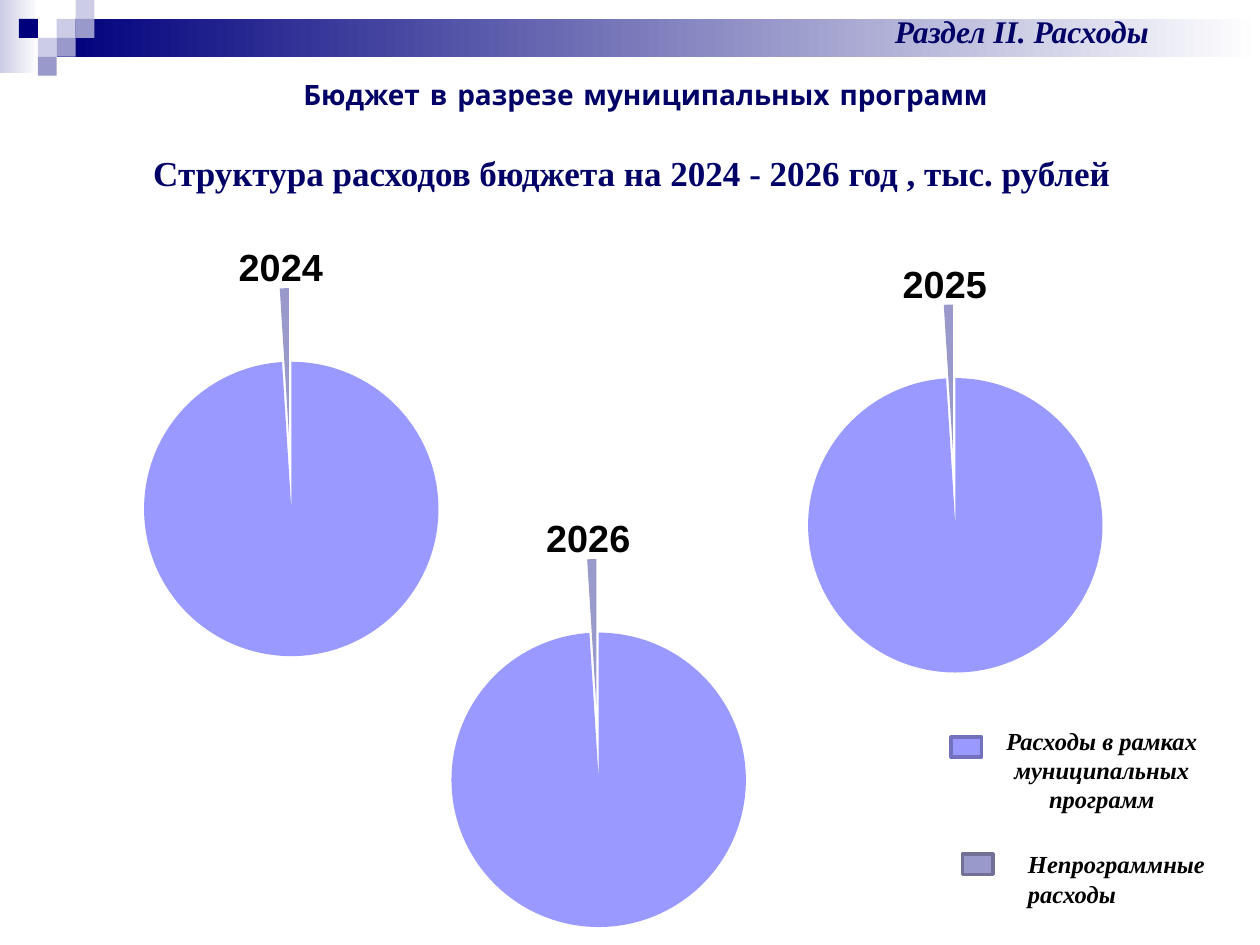
from lxml.etree import SubElement
from pptx import Presentation
from pptx.chart.data import CategoryChartData
from pptx.dml.color import RGBColor
from pptx.enum.chart import XL_CHART_TYPE
from pptx.enum.shapes import MSO_SHAPE
from pptx.enum.text import MSO_ANCHOR, PP_ALIGN
from pptx.oxml.ns import qn
from pptx.util import Inches, Pt

NAVY, LILAC, PALE, BLUE = "00007D", "9999CC", "CCCCE6", "9999FF"
TITLE = "000066"
STEP = 0.15


def rgb(value):
    """Return the colour for a hex string."""
    return RGBColor.from_string(value)


def set_font(font, color, **formats):
    """Apply a colour and format values to a font."""
    font.color.rgb = rgb(color)
    for name, value in formats.items():
        setattr(font, name, value)


def add_rect(s, box, fill, fade=False, line=None):
    """Add a rectangle with a plain fill or a fade to white."""
    sp = s.shapes.add_shape(MSO_SHAPE.RECTANGLE, *map(Inches, box))
    sp.shadow.inherit = False
    if fade:
        sp.fill.gradient()
        sp.fill.gradient_angle = 0
        for stop, color in zip(sp.fill.gradient_stops, (fill, "FFFFFF")):
            stop.color.rgb = rgb(color)
    else:
        sp.fill.solid()
        sp.fill.fore_color.rgb = rgb(fill)
    if line:
        sp.line.color.rgb = rgb(line)
        sp.line.width = Pt(2)
    else:
        sp.line.fill.background()


def add_text(s, box, text, size, color, name="Times New Roman",
             align=PP_ALIGN.CENTER, anchor=MSO_ANCHOR.TOP, italic=False):
    """Add a wrapped text box with one bold paragraph."""
    tf = s.shapes.add_textbox(*map(Inches, box)).text_frame
    tf.word_wrap = True
    tf.vertical_anchor = anchor
    p = tf.paragraphs[0]
    p.alignment = align
    r = p.add_run()
    r.text = text
    set_font(r.font, color, name=name, size=Pt(size), bold=True, italic=italic)


def set_layout(parent, index, **values):
    """Place a chart part by fractions of the chart area."""
    for old in parent.findall(qn("c:layout")):
        parent.remove(old)
    layout = SubElement(parent, qn("c:layout"))
    parent.insert(index, layout)
    manual = SubElement(layout, qn("c:manualLayout"))
    for tag, value in values.items():
        SubElement(manual, qn(f"c:{tag}")).set("val", str(value))


def add_pie(s, left, top, year):
    """Add the exploded pie of one year."""
    data = CategoryChartData()
    data.categories = ["1", "2"]
    data.add_series(year, (99, 1))
    box = map(Inches, (left, top, 4.41, 3.86))
    chart = s.shapes.add_chart(XL_CHART_TYPE.PIE, *box, data).chart
    set_font(chart.font, "000000", name="Arial", size=Pt(18))
    chart.has_legend = False
    chart.has_title = True
    tf = chart.chart_title.text_frame
    tf.text = year
    set_font(tf.paragraphs[0].runs[0].font, "000000",
             name="Arial", size=Pt(21.6), bold=True)
    set_layout(chart.chart_title._element, 1,
               xMode="edge", yMode="edge", x=0.39, y=0.1)
    plot = chart.plots[0]
    plot.vary_by_categories = True
    set_layout(plot._element.getparent(), 0, layoutTarget="inner", xMode="edge",
               yMode="edge", x=0.23, y=0.28, w=0.53, h=0.61)
    series = plot.series[0]
    for i, color in enumerate((BLUE, LILAC)):
        fill = series.points[i].format.fill
        fill.solid()
        fill.fore_color.rgb = rgb(color)
    for point in series._element.findall(qn("c:dPt")):
        explosion = SubElement(point, qn("c:explosion"))
        explosion.set("val", "25")
        point.find(qn("c:spPr")).addprevious(explosion)


def add_header(s):
    """Draw the fading bars and the stepped squares."""
    add_rect(s, (0, 0, 0.31, 0.58), PALE, fade=True)
    add_rect(s, (0.45, 0.15, 9.55, 0.3), NAVY, fade=True)
    squares = [(3, 1, PALE), (4, 0, PALE), (4, 1, LILAC), (2, 2, PALE),
               (1, 1, NAVY), (3, 2, LILAC), (2, 3, LILAC)]
    for col, row, color in squares:
        add_rect(s, (col * STEP, row * STEP, STEP, STEP), color)


def main():
    """Build the slide and save it."""
    prs = Presentation()
    prs.slide_width, prs.slide_height = Inches(10), Inches(7.5)
    s = prs.slides.add_slide(prs.slide_layouts[6])
    add_header(s)
    add_text(s, (0.75, 1.15, 8.53, 0.44),
             "Структура расходов бюджета на 2024 - 2026 год , тыс. рублей",
             20, TITLE, anchor=MSO_ANCHOR.MIDDLE)
    add_text(s, (6.26, 0.05, 3.7, 0.4), "Раздел II. Расходы", 18, TITLE, italic=True)
    add_text(s, (0.88, 0.57, 8.49, 0.37), "Бюджет в разрезе муниципальных программ",
             16, TITLE, name="Comic Neue")
    for left, top, year in ((0.12, 1.49, "2024"), (5.39, 1.62, "2025"),
                            (2.56, 3.64, "2026")):
        add_pie(s, left, top, year)
    add_rect(s, (7.55, 5.85, 0.24, 0.16), BLUE, line="7171BD")
    add_rect(s, (7.64, 6.78, 0.24, 0.16), LILAC, line="717197")
    add_text(s, (7.76, 5.71, 1.97, 0.81), "Расходы в рамках муниципальных программ",
             14, "000000", italic=True)
    add_text(s, (8.06, 6.69, 1.65, 0.81), "Непрограммные расходы",
             14, "000000", align=PP_ALIGN.LEFT, italic=True)
    prs.save("out.pptx")


if __name__ == "__main__":
    main()
